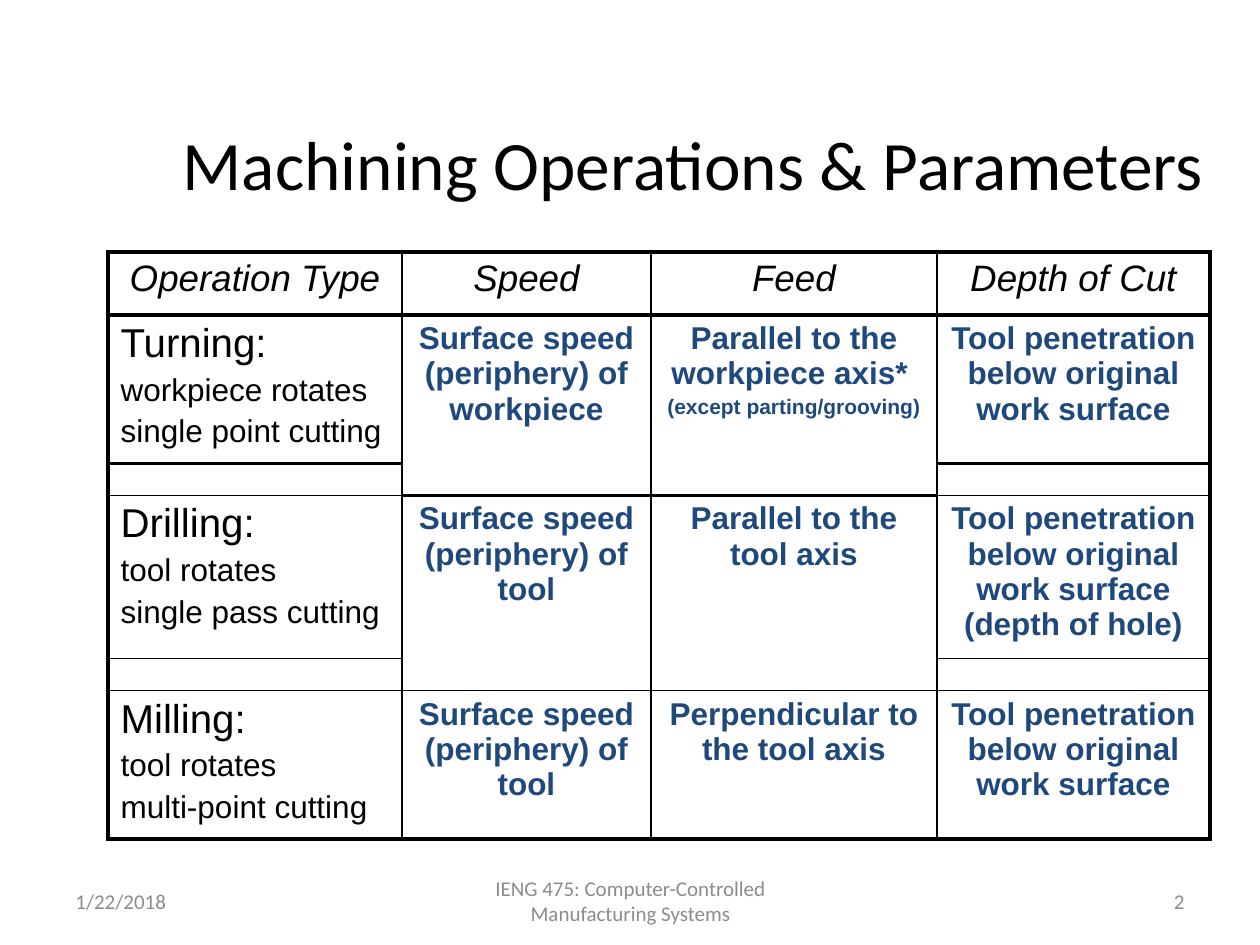
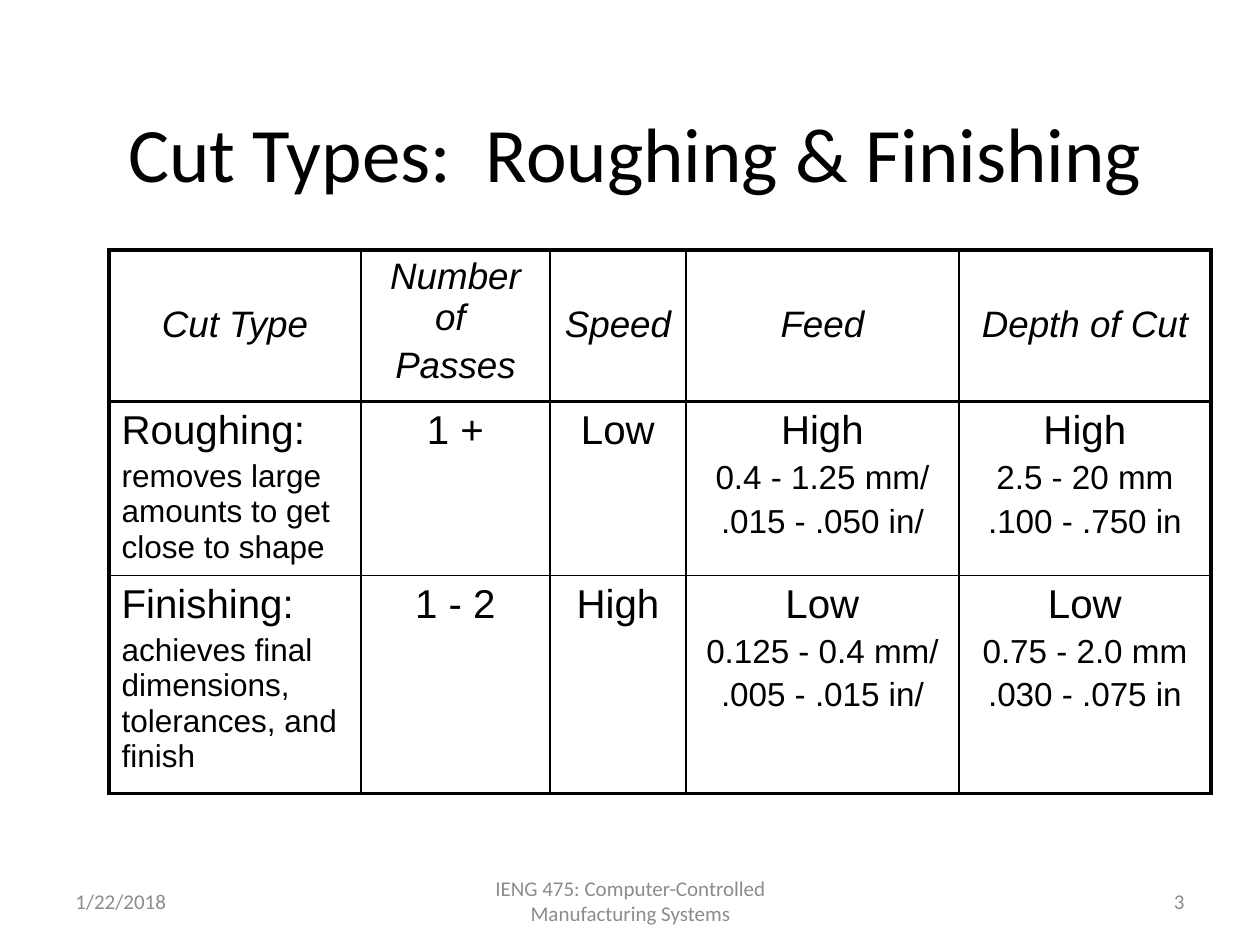
from dataclasses import dataclass
from typing import NamedTuple

from lxml.etree import SubElement
from pptx import Presentation
from pptx.dml.color import RGBColor
from pptx.enum.text import MSO_ANCHOR as Anchor, PP_ALIGN as Align
from pptx.oxml.ns import qn
from pptx.util import Emu, Pt

BLACK = RGBColor(0x00, 0x00, 0x00)
NAVY = RGBColor(0x1F, 0x49, 0x7D)
GRAY = RGBColor(0x8C, 0x8C, 0x8C)
HEAD_FONT = "Calibri"
BODY_FONT = "Arial"
PLAIN_GRID = "{2D5ABB26-0587-4C30-8999-92F81FD0307C}"
THICK, THIN = 2.25, 1
DATE = "1/22/2018"
COURSE = "IENG 475: Computer-Controlled Manufacturing Systems"


def px(count: int) -> Emu:
    return Emu(round(count * 914400 / 126))


class Box(NamedTuple):
    left: int
    top: int
    width: int
    height: int


class Style(NamedTuple):
    size: float
    color: RGBColor = BLACK
    font: str = BODY_FONT
    bold: bool = False
    slant: bool = False


HEAD = Style(21, slant=True)
NAME = Style(23)
NOTE = Style(18)
RANGE = Style(19)
FACT = Style(18, NAVY, bold=True)
SMALL = Style(12, NAVY, bold=True)
FOOT = Style(12, GRAY, HEAD_FONT)


class Line(NamedTuple):
    text: str
    style: Style


@dataclass
class Cell:
    lines: list[Line]
    align: Align = Align.CENTER
    top: int = 6


@dataclass
class Row:
    cells: list[Cell]
    heights: list[int]
    base: int = 6


@dataclass
class Page:
    title: str
    size: float
    place: Box
    corner: tuple[int, int]
    tall: int
    widths: list[int]
    rows: list[Row]


def head(*texts: str, top: int = 6) -> Cell:
    return Cell([Line(text, HEAD) for text in texts], top=top)


def label(name: str, *notes: str) -> Cell:
    return Cell([Line(name, NAME)] + [Line(note, NOTE) for note in notes], Align.LEFT)


def fact(text: str, *smalls: str) -> Cell:
    return Cell([Line(text, FACT)] + [Line(small, SMALL) for small in smalls])


def level(name: str, *spans: str) -> Cell:
    return Cell([Line(name, NAME)] + [Line(span, RANGE) for span in spans])


def write(frame, lines: list[Line], align: Align) -> None:
    for place, (text, style) in enumerate(lines):
        para = frame.add_paragraph() if place else frame.paragraphs[0]
        para.alignment = align
        if place:
            para.space_before = Pt(style.size * 0.2)
        run = para.add_run()
        run.text = text
        font = run.font
        font.name, font.size = style.font, Pt(style.size)
        font.bold, font.italic = style.bold, style.slant
        font.color.rgb = style.color


def add_text(slide, box: Box, line: Line, align: Align) -> None:
    frame = slide.shapes.add_textbox(*map(px, box)).text_frame
    frame.word_wrap = True
    frame.vertical_anchor = Anchor.MIDDLE
    write(frame, [line], align)


def add_edge(cell, side: str, weight: float) -> None:
    edge = SubElement(cell._tc.get_or_add_tcPr(), qn(f"a:ln{side}"), w=str(Pt(weight)))
    fill = SubElement(edge, qn("a:solidFill"))
    SubElement(fill, qn("a:srgbClr"), val=str(BLACK))


def add_edges(grid, row: int, col: int, first: bool, last: bool) -> None:
    cell = grid.cell(row, col)
    bottom = len(grid.rows) - 1
    add_edge(cell, "L", THIN if col else THICK)
    add_edge(cell, "R", THIN if col < len(grid.columns) - 1 else THICK)
    if first:
        add_edge(cell, "T", THICK if row < 2 else THIN)
    if last:
        add_edge(cell, "B", THICK if row in (0, bottom) else THIN)
    cell.fill.background()


def shrink(cell) -> None:
    para = cell.text_frame.paragraphs[0]
    SubElement(para._p, qn("a:endParaRPr"), sz="800")


def add_grid(slide, page: Page) -> None:
    heights = [height for row in page.rows for height in row.heights]
    box = Box(*page.corner, sum(page.widths), page.tall)
    frame = slide.shapes.add_table(len(heights), len(page.widths), *map(px, box))
    grid = frame.table
    grid._tbl.tblPr.find(qn("a:tableStyleId")).text = PLAIN_GRID
    grid.first_row = grid.horz_banding = False
    for col, width in zip(grid.columns, page.widths):
        col.width = px(width)
    for line, height in zip(grid.rows, heights):
        line.height = px(height)
    frame.height = px(page.tall)
    start = 0
    for row in page.rows:
        end = start + len(row.heights) - 1
        for col, item in enumerate(row.cells):
            for at in range(start, end + 1):
                add_edges(grid, at, col, at == start, at == end)
            cell = grid.cell(start, col)
            if end > start:
                shrink(grid.cell(end, col))
                if 0 < col < len(row.cells) - 1:
                    cell.merge(grid.cell(end, col))
            cell.margin_top, cell.margin_bottom = px(item.top), px(row.base)
            write(cell.text_frame, item.lines, item.align)
        start = end + 1


def add_page(deck, page: Page, number: int) -> None:
    slide = deck.slides.add_slide(deck.slide_layouts[6])
    add_text(slide, Box(63, 876, 294, 50), Line(DATE, FOOT), Align.LEFT)
    add_text(slide, Box(431, 876, 399, 50), Line(COURSE, FOOT), Align.CENTER)
    add_text(slide, Box(903, 876, 294, 50), Line(str(number), FOOT), Align.RIGHT)
    title = Line(page.title, Style(page.size, font=HEAD_FONT))
    add_text(slide, page.place, title, Align.CENTER)
    add_grid(slide, page)


DEPTH = "Tool penetration below original work surface"
SPEED = "Surface speed (periphery) of "
LOW = 54

PAGES = [
    Page(
        "Machining Operations & Parameters", 39.6, Box(126, 105, 1134, 116),
        (108, 252), 597, [294, 249, 286, 273],
        [
            Row([head("Operation Type"), head("Speed"), head("Feed"),
                 head("Depth of Cut")], [63]),
            Row([label("Turning:", "workpiece rotates", "single point cutting"),
                 fact(SPEED + "workpiece"),
                 fact("Parallel to the workpiece axis* ", "(except parting/grooving)"),
                 fact(DEPTH)], [120, 32]),
            Row([label("Drilling:", "tool rotates", "single pass cutting"),
                 fact(SPEED + "tool"), fact("Parallel to the tool axis"),
                 fact(DEPTH + " (depth of hole)")], [32, 32]),
            Row([label("Milling:", "tool rotates", "multi-point cutting"),
                 fact(SPEED + "tool"), fact("Perpendicular to the tool axis"),
                 fact(DEPTH)], [120]),
        ],
    ),
    Page(
        "Cut Types:  Roughing & Finishing", 44, Box(105, 73, 1061, 158),
        (109, 250), 549, [252, 189, 136, 273, 252],
        [
            Row([head("Cut Type", top=LOW), head("Number of ", "Passes"),
                 head("Speed", top=LOW), head("Feed", top=LOW),
                 head("Depth of Cut", top=LOW)], [120]),
            Row([label("Roughing:", "removes large amounts to get close to shape"),
                 level("1 +"), level("Low"),
                 level("High", "0.4 - 1.25 mm/", ".015 - .050 in/"),
                 level("High", "2.5 - 20 mm", ".100 - .750 in")], [120], base=0),
            Row([label("Finishing:", "achieves final dimensions, tolerances, and finish"),
                 level("1 - 2"), level("High"),
                 level("Low", "0.125 - 0.4 mm/", ".005 - .015 in/"),
                 level("Low", "0.75 - 2.0 mm", ".030 - .075 in")], [120]),
        ],
    ),
]


def main() -> None:
    deck = Presentation()
    deck.slide_width, deck.slide_height = px(1260), px(945)
    for number, page in enumerate(PAGES, 2):
        add_page(deck, page, number)
    deck.save("out.pptx")


if __name__ == "__main__":
    main()
